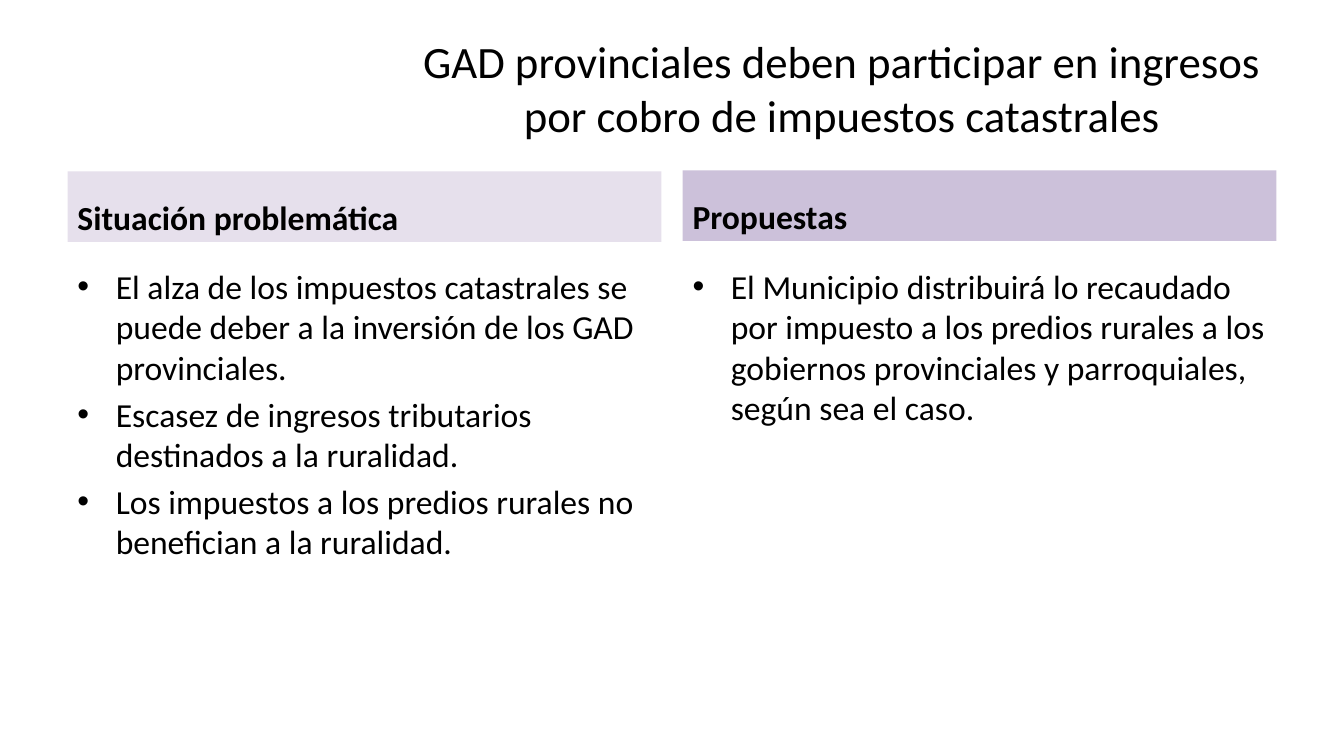
from lxml import etree
from pptx import Presentation
from pptx.dml.color import RGBColor
from pptx.enum.shapes import MSO_SHAPE
from pptx.enum.text import MSO_ANCHOR, PP_ALIGN
from pptx.oxml.ns import qn
from pptx.util import Inches, Pt

RECTANGLE = MSO_SHAPE.RECTANGLE
TOP, MIDDLE, BOTTOM = MSO_ANCHOR.TOP, MSO_ANCHOR.MIDDLE, MSO_ANCHOR.BOTTOM
LEFT, CENTER = PP_ALIGN.LEFT, PP_ALIGN.CENTER
BLACK = RGBColor(0x00, 0x00, 0x00)
PALE_LILAC = RGBColor(0xE6, 0xE0, 0xEC)
LILAC = RGBColor(0xCC, 0xC1, 0xDA)

# Content
TITLE = "GAD provinciales deben participar en ingresos por cobro de impuestos catastrales"
COLUMNS = [
    {
        "heading": "Situación problemática",
        "fill": PALE_LILAC,
        "heading_top": 1.7,
        "points": [
            "El alza de los impuestos catastrales se puede deber a la inversión de los GAD provinciales.",
            "Escasez de ingresos tributarios destinados a la ruralidad.",
            "Los impuestos a los predios rurales no benefician a la ruralidad.",
        ],
    },
    {
        "heading": "Propuestas",
        "fill": LILAC,
        "heading_top": 1.69,
        "points": [
            "El Municipio distribuirá lo recaudado por impuesto a los predios rurales "
            "a los gobiernos provinciales y parroquiales, según sea el caso.",
        ],
    },
]

# Formats and layout, in inches
TITLE_FONT = {"name": "Calibri", "size": Pt(32), "bold": False}
HEADING_FONT = {"name": "Calibri", "size": Pt(24), "bold": True}
POINT_FONT = {"name": "Calibri", "size": Pt(24), "bold": False}
POINT_GAP = Pt(4.8)
BULLET_INDENT = Inches(0.38)
COLUMN_LEFT, COLUMN_WIDTH, COLUMN_STEP = 0.67, 5.89, 6.1
HEADING_HEIGHT = 0.7
POINTS_TOP, POINTS_HEIGHT = 2.59, 4.11


def add_bullet(paragraph):
    properties = paragraph._p.get_or_add_pPr()
    properties.set("marL", str(BULLET_INDENT))
    properties.set("indent", str(-BULLET_INDENT))
    etree.SubElement(properties, qn("a:buFont")).set("typeface", "Arial")
    etree.SubElement(properties, qn("a:buChar")).set("char", "•")


def write_text(shape, lines, font, anchor=TOP, alignment=LEFT, bulleted=False):
    frame = shape.text_frame
    frame.word_wrap = True
    frame.vertical_anchor = anchor
    for index, line in enumerate(lines):
        paragraph = frame.add_paragraph() if index else frame.paragraphs[0]
        if bulleted:
            add_bullet(paragraph)
        paragraph.alignment = alignment
        if index:
            paragraph.space_before = POINT_GAP
        run = paragraph.add_run()
        run.text = line
        for name, value in font.items():
            setattr(run.font, name, value)
        run.font.color.rgb = BLACK


def add_column(slide, left, column):
    # Heading band
    band = slide.shapes.add_shape(
        RECTANGLE, Inches(left), Inches(column["heading_top"]),
        Inches(COLUMN_WIDTH), Inches(HEADING_HEIGHT))
    band.shadow.inherit = False
    band.fill.solid()
    band.fill.fore_color.rgb = column["fill"]
    band.line.fill.background()
    write_text(band, [column["heading"]], HEADING_FONT, anchor=BOTTOM)

    # Bulleted points
    points = slide.shapes.add_textbox(
        Inches(left), Inches(POINTS_TOP), Inches(COLUMN_WIDTH), Inches(POINTS_HEIGHT))
    write_text(points, column["points"], POINT_FONT, bulleted=True)


def main():
    presentation = Presentation()
    presentation.slide_width = Inches(13.33)
    presentation.slide_height = Inches(7.5)
    slide = presentation.slides.add_slide(presentation.slide_layouts[6])

    # Title
    title = slide.shapes.add_textbox(Inches(4.04), Inches(0.24), Inches(8.62), Inches(1.25))
    write_text(title, [TITLE], TITLE_FONT, anchor=MIDDLE, alignment=CENTER)

    # Two columns
    for index, column in enumerate(COLUMNS):
        add_column(slide, COLUMN_LEFT + index * COLUMN_STEP, column)

    presentation.save("out.pptx")


if __name__ == "__main__":
    main()
